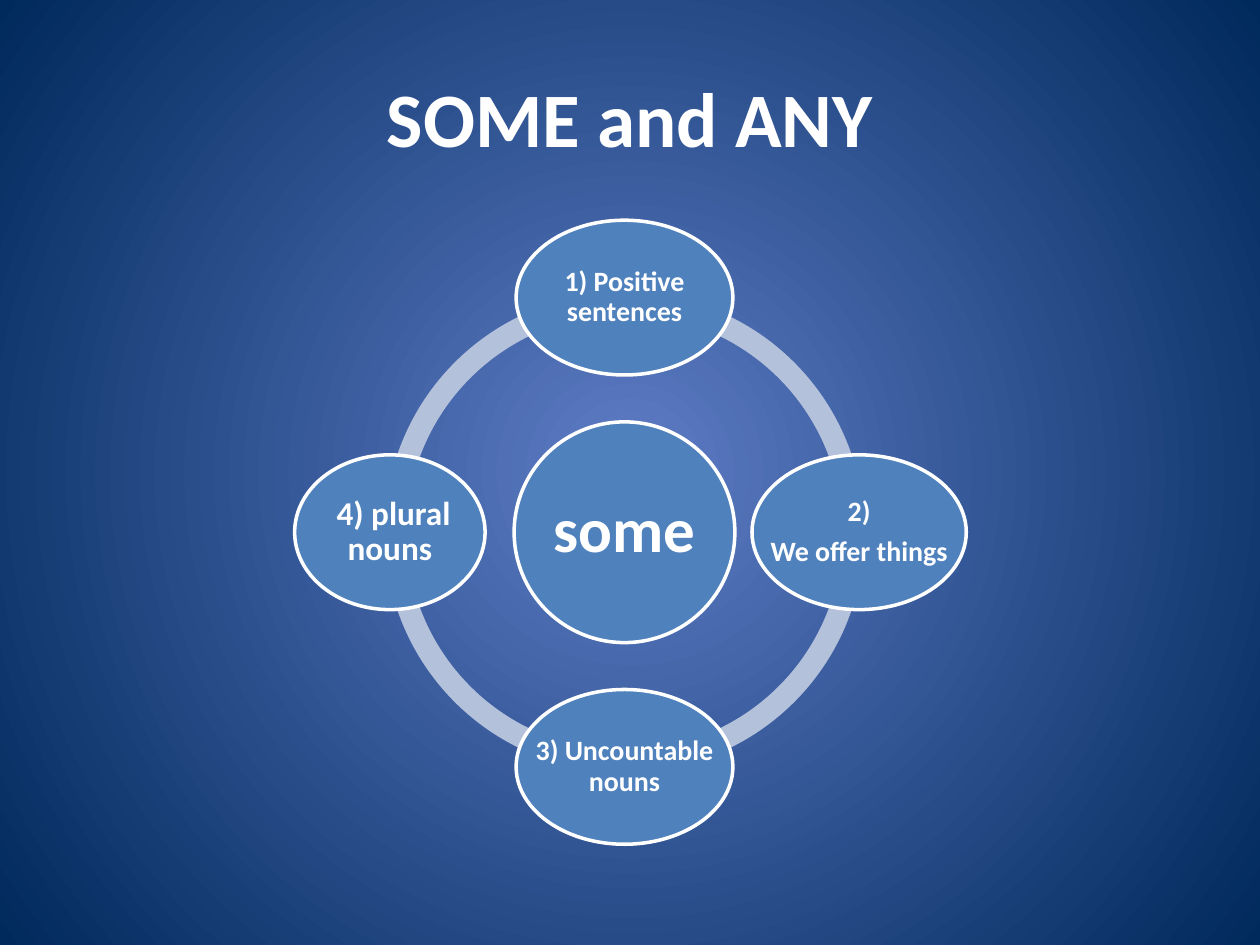
import dataclasses
import math

import pptx
import pptx.dml.color
import pptx.enum.shapes
import pptx.enum.text
import pptx.oxml
import pptx.oxml.ns
import pptx.util

Cm, Pt = pptx.util.Cm, pptx.util.Pt
SHAPE = pptx.enum.shapes.MSO_SHAPE
CENTER = pptx.enum.text.PP_ALIGN.CENTER
MIDDLE = pptx.enum.text.MSO_ANCHOR.MIDDLE


def rgb(value):
    return pptx.dml.color.RGBColor.from_string(value)


@dataclasses.dataclass(frozen=True)
class Theme:
    font: str = "Calibri"
    text: str = "FFFFFF"
    bubble: str = "4F81BD"
    ring: str = "B3C1DB"
    glow: str = "5E7CC5"
    edge: str = "00295C"
    title_size: int = 44
    hub_size: int = 36
    large_size: int = 19
    node_size: int = 16
    outline: int = 2


THEME = Theme()

# Paragraphs, width in cm, text size; clockwise from the top
NODES = [
    (["1) Positive sentences"], 4.37, THEME.node_size),
    (["2)", "We offer things"], 4.32, THEME.node_size),
    (["3) Uncountable nouns"], 4.37, THEME.node_size),
    ([" 4) plural nouns"], 3.84, THEME.large_size),
]


def style_font(p, size):
    p.alignment = CENTER
    p.font.name = THEME.font
    p.font.size = Pt(size)
    p.font.bold = True
    p.font.color.rgb = rgb(THEME.text)


def add_background(slide):
    fill = slide.background.fill
    fill.gradient()
    for stop, color, position in zip(fill.gradient_stops,
                                     (THEME.glow, THEME.edge), (0, 1)):
        stop.color.rgb = rgb(color)
        stop.position = position
    # Radial gradient from the centre outwards
    lin = slide.background._cSld.find(".//" + pptx.oxml.ns.qn("a:lin"))
    radial = pptx.oxml.parse_xml(
        f'<a:path {pptx.oxml.ns.nsdecls("a")} path="circle">'
        '<a:fillToRect l="50000" t="50000" r="50000" b="50000"/></a:path>')
    lin.getparent().replace(lin, radial)


def add_title(slide, text, left, top, width, height):
    title = slide.shapes.title
    title.left, title.top, title.width, title.height = left, top, width, height
    tf = title.text_frame
    tf.text = text
    tf.vertical_anchor = MIDDLE
    style_font(tf.paragraphs[0], THEME.title_size)


def add_bubble(shapes, cx, cy, width, height, lines, size, inset):
    box = (int(cx - width / 2), int(cy - height / 2), width, height)
    sp = shapes.add_shape(SHAPE.OVAL, *box)
    sp.shadow.inherit = False
    sp.fill.solid()
    sp.fill.fore_color.rgb = rgb(THEME.bubble)
    sp.line.color.rgb = rgb(THEME.text)
    sp.line.width = Pt(THEME.outline)

    # The label uses the full width of the bubble
    tf = shapes.add_textbox(*box).text_frame
    tf.word_wrap = True
    tf.vertical_anchor = MIDDLE
    tf.margin_left = tf.margin_right = inset
    tf.margin_top = tf.margin_bottom = inset
    tf.text = "\n".join(lines)
    for p in tf.paragraphs:
        style_font(p, size)
        p.line_spacing = 0.9
        p.space_after = Pt(0.35 * size)


def add_cycle(slide, hub, nodes, left, top, size):
    """Ring of four arcs with a hub and one node at each quarter."""
    shapes = slide.shapes.add_group_shape().shapes
    cx, cy = left + size / 2, top + size / 2

    # Ring: a quarter turn is 54 adjustment units
    for i in range(4):
        arc = shapes.add_shape(SHAPE.BLOCK_ARC, left, top, size, size)
        arc.adjustments[0] = 54 * i
        arc.adjustments[1] = 54 * (i + 1) % 216
        arc.adjustments[2] = 0.046
        arc.shadow.inherit = False
        arc.fill.solid()
        arc.fill.fore_color.rgb = rgb(THEME.ring)
        arc.line.fill.background()

    # Hub
    add_bubble(shapes, cx, cy, Cm(4.45), Cm(4.45), [hub],
               THEME.hub_size, Cm(0.13))

    # Nodes
    radius = Cm(4.73)
    for i, (lines, width, text_size) in enumerate(nodes):
        angle = math.radians(90 * i - 90)
        add_bubble(shapes, cx + radius * math.cos(angle),
                   cy + radius * math.sin(angle), Cm(width), Cm(3.12),
                   lines, text_size, Cm(0.05))


def main():
    prs = pptx.Presentation()
    prs.slide_width, prs.slide_height = Cm(25.4), Cm(19.05)
    slide = prs.slides.add_slide(prs.slide_layouts[5])
    add_background(slide)
    add_title(slide, "SOME and ANY", Cm(1.27), Cm(0.76), Cm(22.86), Cm(3.18))
    add_cycle(slide, "some", NODES, Cm(7.75), Cm(5.89), Cm(9.68))
    prs.save("out.pptx")


if __name__ == "__main__":
    main()
